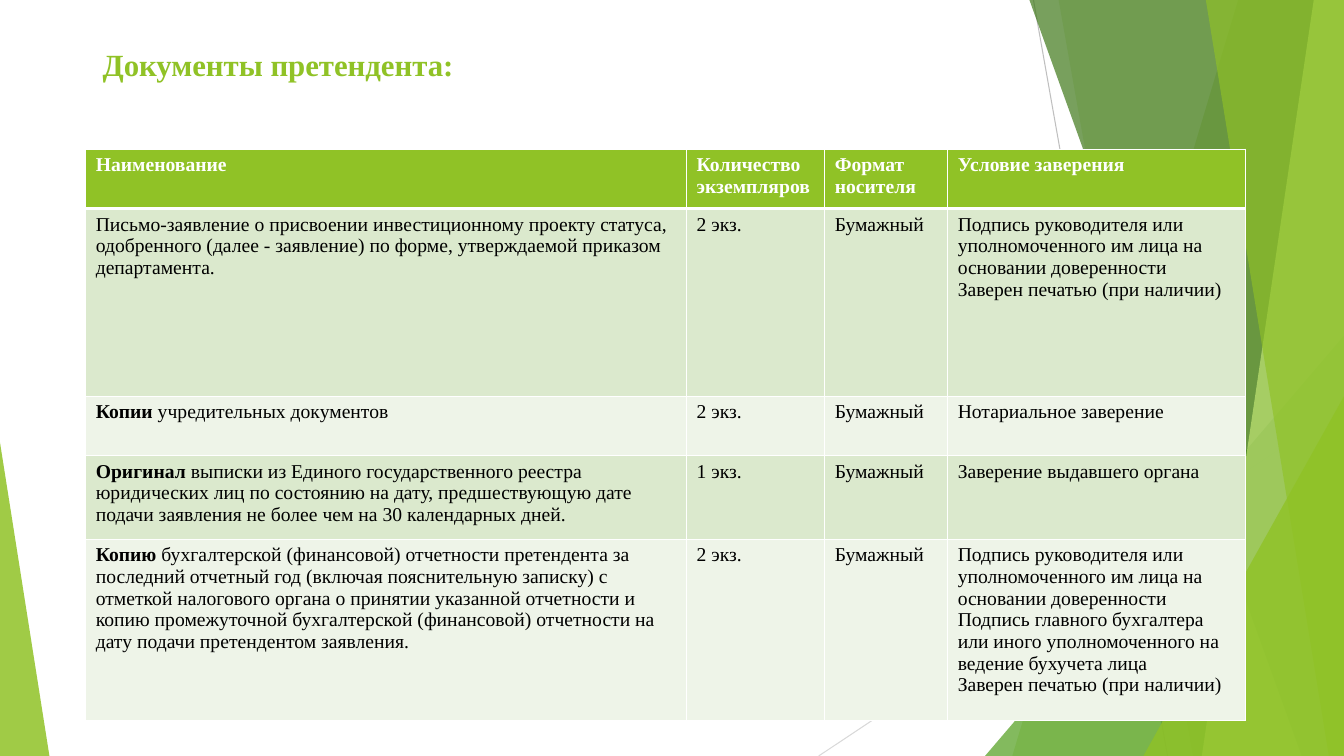
from dataclasses import dataclass

from lxml.etree import SubElement
from pptx import Presentation
from pptx.dml.color import RGBColor
from pptx.enum.shapes import MSO_CONNECTOR as CONNECTOR, MSO_SHAPE as SHAPE
from pptx.enum.text import MSO_ANCHOR as ANCHOR
from pptx.oxml.ns import qn
from pptx.util import Inches, Pt

WIDTH, HEIGHT = 13.33, 7.5
FONT = "Times New Roman"
WHITE, BLACK, GREEN = "FFFFFF", "000000", "90C226"
BANDS = ("DBE9CD", "EEF4E8")


@dataclass
class Ray:
    start: tuple[float, float]
    end: tuple[float, float]
    color: str


@dataclass
class Facet:
    """Panel reaching the right edge; its left side runs from top to bottom."""
    top_x: float
    bottom_x: float
    color: str
    opacity: int


@dataclass
class Corner:
    """Right triangle standing on the bottom edge; apex is 0 (left) or 1 (right)."""
    left: float
    top: float
    width: float
    apex: int
    color: str
    opacity: int


@dataclass
class Document:
    lead: str
    name: str
    copies: str
    conditions: list[str]


RAYS = [
    Ray((10.25, 0), (11.58, HEIGHT), "BFBFBF"),
    Ray((WIDTH, 4.03), (8.12, HEIGHT), "D9D9D9"),
]
DECOR = [
    Facet(12.28, 10.04, GREEN, 30),
    Facet(10.5, 11.83, GREEN, 20),
    Corner(9.77, 3.33, 3.56, 1, "54A021", 72),
    Facet(10.21, 12.91, "3F7819", 70),
    Facet(13.03, 11.92, "C0E474", 70),
    Facet(11.96, 13.18, GREEN, 65),
    Corner(11.34, 3.93, 1.99, 1, GREEN, 80),
    Corner(0, 4.39, 0.49, 0, GREEN, 85),
]

HEADERS = ["Наименование", "Количество экземпляров", "Формат носителя", "Условие заверения"]
COLUMN_WIDTHS = [5.96, 1.37, 1.22, 2.95]
ROW_HEIGHTS = [0.59, 1.86, 0.59, 0.83, 1.8]
MEDIUM = "Бумажный"
HEAD_SIGNATURE = "Подпись руководителя или уполномоченного им лица на основании доверенности"
SEAL = "Заверен печатью (при наличии)"
DOCUMENTS = [
    Document("", "Письмо-заявление о присвоении инвестиционному проекту статуса, "
             "одобренного (далее - заявление) по форме, утверждаемой приказом департамента.",
             "2 экз.", [HEAD_SIGNATURE, SEAL]),
    Document("Копии", " учредительных документов", "2 экз.", ["Нотариальное заверение"]),
    Document("Оригинал", " выписки из Единого государственного реестра юридических лиц "
             "по состоянию на дату, предшествующую дате подачи заявления не более чем "
             "на 30 календарных дней.",
             "1 экз.", ["Заверение выдавшего органа"]),
    Document("Копию", " бухгалтерской (финансовой) отчетности претендента за последний "
             "отчетный год (включая пояснительную записку) с отметкой налогового органа "
             "о принятии указанной отчетности и копию промежуточной бухгалтерской "
             "(финансовой) отчетности на дату подачи претендентом заявления.",
             "2 экз.",
             [HEAD_SIGNATURE,
              "Подпись главного бухгалтера или иного уполномоченного на ведение бухучета лица",
              SEAL]),
]


def rgb(color: str) -> RGBColor:
    return RGBColor.from_string(color)


def add_run(p, text: str, size: float, color: str, bold: bool = False) -> None:
    r = p.add_run()
    r.text = text
    r.font.name, r.font.size, r.font.bold = FONT, Pt(size), bold
    r.font.color.rgb = rgb(color)


def draw_ray(shapes, ray: Ray) -> None:
    line = shapes.add_connector(CONNECTOR.STRAIGHT, *map(Inches, ray.start + ray.end))
    line.line.color.rgb = rgb(ray.color)
    line.line.width = Pt(0.75)
    SubElement(line._element.spPr, qn("a:effectLst"))


def draw_decor(shapes, item: Facet | Corner) -> None:
    if isinstance(item, Facet):
        outline = shapes.build_freeform(Inches(item.top_x), 0)
        corners = [(WIDTH, 0), (WIDTH, HEIGHT), (item.bottom_x, HEIGHT)]
        outline.add_line_segments([(Inches(x), Inches(y)) for x, y in corners], close=True)
        sp = outline.convert_to_shape()
    else:
        sp = shapes.add_shape(SHAPE.ISOSCELES_TRIANGLE, Inches(item.left), Inches(item.top),
                              Inches(item.width), Inches(HEIGHT - item.top))
        sp.adjustments[0] = item.apex
    sp.shadow.inherit = False
    sp.line.fill.background()
    sp.fill.solid()
    sp.fill.fore_color.rgb = rgb(item.color)
    color = sp._element.spPr.find(qn("a:solidFill"))[0]
    SubElement(color, qn("a:alpha"), val=str(item.opacity * 1000))


def draw_title(shapes, text: str) -> None:
    tf = shapes.add_textbox(Inches(0.92), Inches(0.4), Inches(11.5), Inches(0.72)).text_frame
    tf.word_wrap = True
    tf.vertical_anchor = ANCHOR.TOP
    add_run(tf.paragraphs[0], text, 22, GREEN, bold=True)


def style_cell(cell, fill: str, top: float, bottom: float) -> None:
    """Fill a cell and give it white borders; top and bottom widths are in points."""
    tc_pr = cell._tc.get_or_add_tcPr()
    for side, width in (("L", 1), ("R", 1), ("T", top), ("B", bottom)):
        line = SubElement(tc_pr, qn(f"a:ln{side}"), w=str(Pt(width)))
        SubElement(SubElement(line, qn("a:solidFill")), qn("a:srgbClr"), val=WHITE)
    cell.fill.solid()
    cell.fill.fore_color.rgb = rgb(fill)


def write_cell(cell, paragraphs: list[str], color: str, bold: bool = False,
               lead: str = "") -> None:
    tf = cell.text_frame
    for i, text in enumerate(paragraphs):
        p = tf.add_paragraph() if i else tf.paragraphs[0]
        if lead and i == 0:
            add_run(p, lead, 14, color, bold=True)
        add_run(p, text, 14, color, bold)


def draw_table(shapes) -> None:
    table = shapes.add_table(len(ROW_HEIGHTS), len(COLUMN_WIDTHS), Inches(0.85), Inches(1.48),
                             Inches(sum(COLUMN_WIDTHS)), Inches(sum(ROW_HEIGHTS))).table
    for column, width in zip(table.columns, COLUMN_WIDTHS):
        column.width = Inches(width)
    for row, height in zip(table.rows, ROW_HEIGHTS):
        row.height = Inches(height)

    for cell, header in zip(table.rows[0].cells, HEADERS):
        style_cell(cell, GREEN, top=1, bottom=3)
        write_cell(cell, [header], WHITE, bold=True)
    for i, doc in enumerate(DOCUMENTS):
        cells = list(table.rows[i + 1].cells)
        contents = [[doc.name], [doc.copies], [MEDIUM], doc.conditions]
        for j, (cell, paragraphs) in enumerate(zip(cells, contents)):
            style_cell(cell, BANDS[i % 2], top=1 if i else 3, bottom=1)
            write_cell(cell, paragraphs, BLACK, lead="" if j else doc.lead)


def main() -> None:
    prs = Presentation()
    prs.slide_width, prs.slide_height = Inches(WIDTH), Inches(HEIGHT)
    shapes = prs.slides.add_slide(prs.slide_layouts[6]).shapes
    for ray in RAYS:
        draw_ray(shapes, ray)
    for item in DECOR:
        draw_decor(shapes, item)
    draw_title(shapes, "Документы претендента:")
    draw_table(shapes)
    prs.save("out.pptx")


if __name__ == "__main__":
    main()
